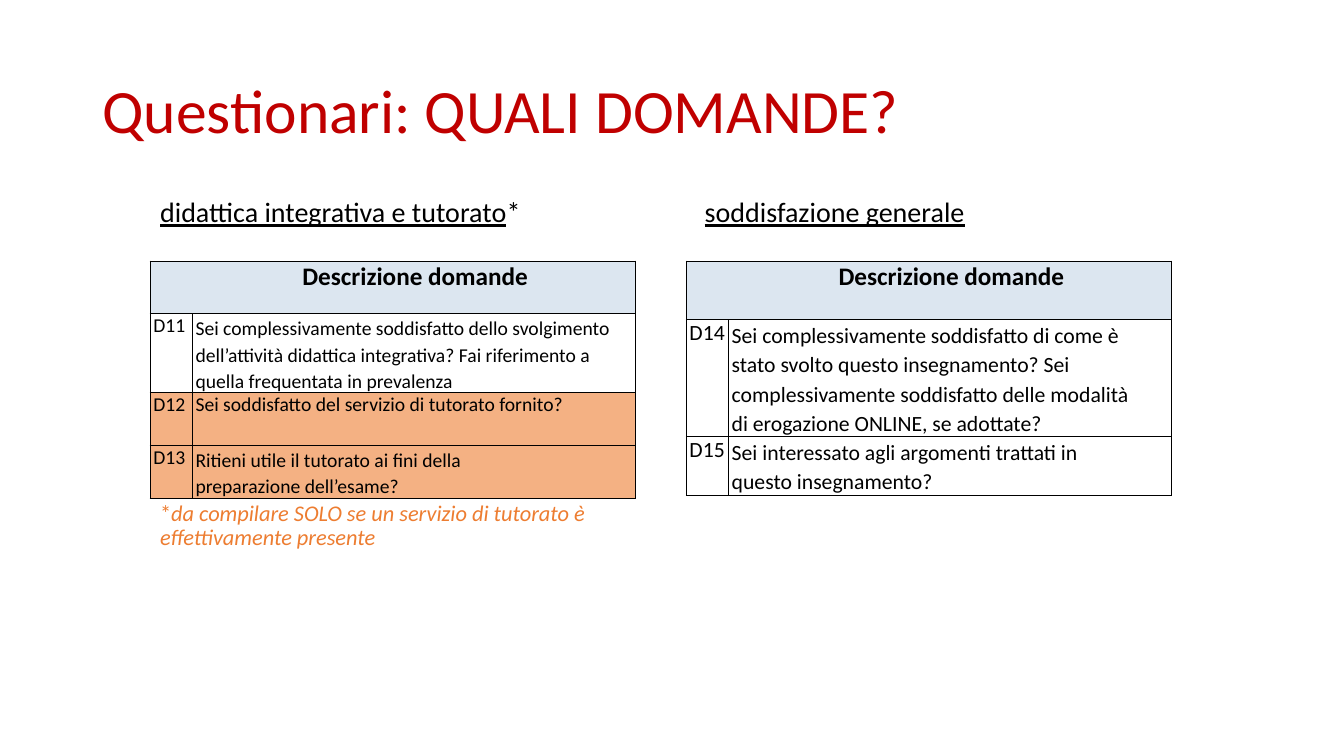
from pptx import Presentation
from pptx.dml.color import RGBColor
from pptx.enum import text
from pptx.oxml import xmlchemy
from pptx.oxml.ns import qn
from pptx.util import Pt

BLACK = RGBColor(0, 0, 0)
RED = RGBColor(0xC0, 0, 0)
ORANGE = RGBColor(0xED, 0x7D, 0x31)
PEACH = RGBColor(0xF4, 0xB1, 0x83)
PALE_BLUE = RGBColor(0xDC, 0xE6, 0xF0)

TITLE = "Questionari: QUALI DOMANDE?"
SUBTITLES = ("didattica integrativa e tutorato", "soddisfazione generale")
NOTE = "da compilare SOLO se un servizio di tutorato è effettivamente presente"
HEADER = "Descrizione domande"

# Each question: code, wording, fill, row height, line spacing, right inset
TUTORING = [
    ("D11", "Sei complessivamente soddisfatto dello svolgimento dell’attività "
            "didattica integrativa? Fai riferimento a quella frequentata in prevalenza",
     None, 56.4, 1.12, 12),
    ("D12", "Sei soddisfatto del servizio di tutorato fornito?", PEACH, 37.7, 1, 12),
    ("D13", "Ritieni utile il tutorato ai fini della preparazione dell’esame?",
     PEACH, 37.7, 1.12, 82),
]
SATISFACTION = [
    ("D14", "Sei complessivamente soddisfatto di come è stato svolto questo "
            "insegnamento? Sei complessivamente soddisfatto delle modalità di "
            "erogazione ONLINE, se adottate?", None, 83.6, 1.11, 24),
    ("D15", "Sei interessato agli argomenti trattati in questo insegnamento?",
     None, 41.8, 1.11, 24),
]
# Each table: left, header height, question size, horizontal border, questions
TABLES = [
    (107.3, 37.7, 14, 0.85, TUTORING),
    (490.3, 41.8, 15.5, 0.92, SATISFACTION),
]
TABLE_TOP = 186.5
COLUMNS = (30.2, 316.6)
SIDE_BORDER = 0.85
SUBTITLE_TAB = 389


def write(paragraph, runs, spacing=1.0):
    """Fill a paragraph with (wording, font format) runs."""
    paragraph.line_spacing = spacing
    for wording, font_format in runs:
        run = paragraph.add_run()
        run.text = wording
        run.font.name = "Calibri"
        run.font.color.rgb = font_format.get("color", BLACK)
        for key, value in font_format.items():
            if key != "color":
                setattr(run.font, key, value)


def add_text(slide, box, runs, anchor=text.MSO_ANCHOR.TOP):
    frame = slide.shapes.add_textbox(*map(Pt, box)).text_frame
    frame.word_wrap = True
    frame.vertical_anchor = anchor
    write(frame.paragraphs[0], runs, 0.9)
    return frame.paragraphs[0]


def add_tab_stop(paragraph, position):
    stops = xmlchemy.OxmlElement("a:tabLst")
    stop = xmlchemy.OxmlElement("a:tab")
    stop.set("pos", str(Pt(position)))
    stop.set("algn", "l")
    stops.append(stop)
    properties = paragraph._p.get_or_add_pPr()
    properties.append(stops)


def set_borders(cell, horizontal):
    properties = cell._tc.get_or_add_tcPr()
    for side, width in zip("LRTB", (SIDE_BORDER, SIDE_BORDER, horizontal, horizontal)):
        line = xmlchemy.OxmlElement(f"a:ln{side}")
        line.set("w", str(Pt(width)))
        fill = xmlchemy.OxmlElement("a:solidFill")
        color = xmlchemy.OxmlElement("a:srgbClr")
        color.set("val", str(BLACK))
        fill.append(color)
        line.append(fill)
        properties.append(line)


def fill_cell(cell, wording, font_format, fill, left=2.2, right=0, spacing=1.0):
    margins = {"margin_left": left, "margin_right": right,
               "margin_top": 0, "margin_bottom": 0}
    for key, value in margins.items():
        setattr(cell, key, Pt(value))
    if fill is None:
        cell.fill.background()
    else:
        cell.fill.solid()
        cell.fill.fore_color.rgb = fill
    write(cell.text_frame.paragraphs[0], [(wording, font_format)], spacing)


def add_questions(slide, left, header_height, size, horizontal, questions):
    heights = [header_height] + [question[3] for question in questions]
    table = slide.shapes.add_table(
        len(heights), len(COLUMNS), Pt(left), Pt(TABLE_TOP),
        Pt(sum(COLUMNS)), Pt(sum(heights))).table
    table.first_row = table.horz_banding = False
    for column, width in zip(table.columns, COLUMNS):
        column.width = Pt(width)
    for row, height in zip(table.rows, heights):
        row.height = Pt(height)
        for cell in row.cells:
            set_borders(cell, horizontal)

    table.cell(0, 0).merge(table.cell(0, 1))
    fill_cell(table.cell(0, 0), HEADER, {"size": Pt(18), "bold": True},
              PALE_BLUE, left=108.7)
    plain = {"size": Pt(size), "bold": False}
    for index, (code, wording, fill, _, spacing, right) in enumerate(questions, 1):
        fill_cell(table.cell(index, 0), code, plain, fill)
        fill_cell(table.cell(index, 1), wording, plain, fill,
                  right=right, spacing=spacing)


def main():
    deck = Presentation()
    deck.slide_width, deck.slide_height = Pt(960), Pt(540)
    slide = deck.slides.add_slide(deck.slide_layouts[6])

    add_text(slide, (66.2, 28.8, 828, 104.4),
             [(TITLE, {"size": Pt(44), "color": RED})], text.MSO_ANCHOR.MIDDLE)
    heading = {"size": Pt(20), "underline": True}
    subtitles = add_text(slide, (107.3, 138.2, 730, 42.5), [
        (SUBTITLES[0], heading),
        ("*\t", {"size": Pt(20), "underline": False}),
        (SUBTITLES[1], heading)])
    add_tab_stop(subtitles, SUBTITLE_TAB)
    for table in TABLES:
        add_questions(slide, *table)
    note = {"size": Pt(16), "color": ORANGE}
    add_text(slide, (107.3, 355, 365, 64),
             [("*", note), (NOTE, {**note, "italic": True})])

    deck.save("out.pptx")


if __name__ == "__main__":
    main()
